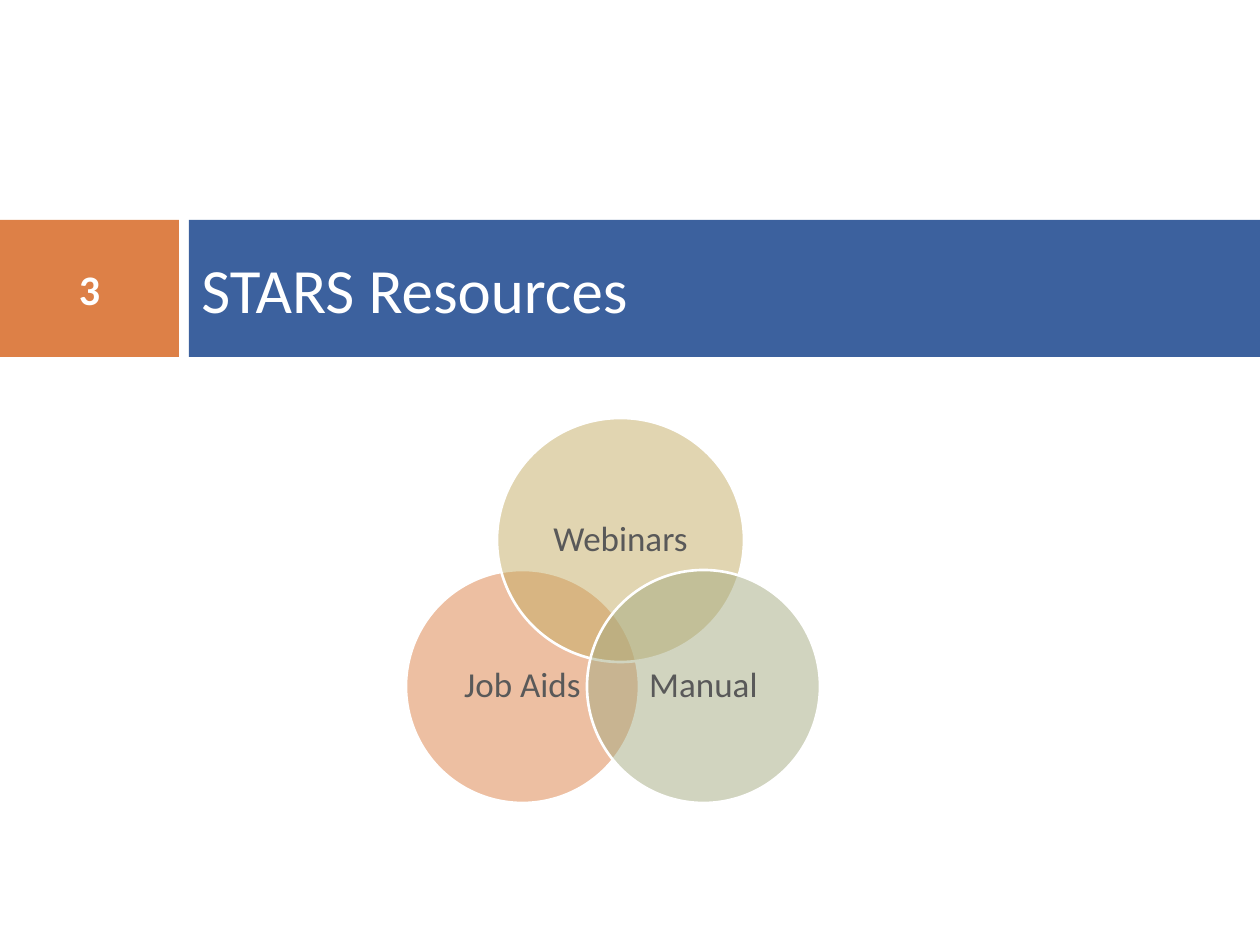
from lxml import etree
from pptx import Presentation
from pptx.dml.color import RGBColor
from pptx.enum.shapes import MSO_SHAPE
from pptx.enum.text import MSO_ANCHOR, PP_ALIGN
from pptx.oxml.ns import qn
from pptx.util import Pt

RECT, OVAL = MSO_SHAPE.RECTANGLE, MSO_SHAPE.OVAL
LEFT, CENTER = PP_ALIGN.LEFT, PP_ALIGN.CENTER
MIDDLE = MSO_ANCHOR.MIDDLE

ORANGE = RGBColor(0xDD, 0x80, 0x47)
BLUE = RGBColor(0x3C, 0x61, 0x9E)
GOLD = RGBColor(0xC4, 0xAD, 0x64)
SAGE = RGBColor(0xA5, 0xAB, 0x81)
GRAY = RGBColor(0x59, 0x59, 0x59)
WHITE = RGBColor(0xFF, 0xFF, 0xFF)

FONT = "Calibri"
PX_PER_INCH = 126


def px(n):
    return round(n * 914400 / PX_PER_INCH)


def add_labelled(s, kind, box, fill, text, size, color, align=CENTER):
    sp = s.shapes.add_shape(kind, *map(px, box))
    sp.shadow.inherit = False
    sp.fill.solid()
    sp.fill.fore_color.rgb = fill
    sp.line.fill.background()
    tf = sp.text_frame
    tf.word_wrap = True
    tf.vertical_anchor = MIDDLE
    p = tf.paragraphs[0]
    p.text = text
    p.alignment = align
    p.font.name = FONT
    p.font.size = Pt(size)
    p.font.color.rgb = color
    return sp


def set_alpha(sp, percent):
    clr = sp._element.spPr.find(qn("a:solidFill"))[0]
    etree.SubElement(clr, qn("a:alpha"), val=str(percent * 1000))


def title_band(s, x, y, w, h):
    number_w, gap = 179, 10
    title_x = number_w + gap
    number = add_labelled(s, RECT, (x, y, number_w, h), ORANGE, "3", 24, WHITE)
    number.text_frame.paragraphs[0].font.bold = True
    add_labelled(s, RECT, (x + title_x, y, w - title_x, h), BLUE,
                 "STARS Resources", 36, WHITE, LEFT)


def venn(s, x, y):
    circles = [
        ("Job Aids", ORANGE, 0, 152, 233, 233),
        ("Webinars", GOLD, 91, 0, 247, 244),
        ("Manual", SAGE, 181, 152, 233, 233),
    ]
    for text, fill, dx, dy, w, h in circles:
        sp = add_labelled(s, OVAL, (x + dx, y + dy, w, h), fill, text, 20, GRAY)
        set_alpha(sp, 50)
        sp.line.color.rgb = WHITE
        sp.line.width = Pt(1.5)
        tf = sp.text_frame
        tf.margin_left = tf.margin_right = px(10)
        tf.margin_top = tf.margin_bottom = px(10)
        tf.paragraphs[0].line_spacing = 0.9


def main():
    prs = Presentation()
    prs.slide_width, prs.slide_height = px(1260), px(945)
    s = prs.slides.add_slide(prs.slide_layouts[6])
    title_band(s, 0, 220, 1260, 137)
    venn(s, 406, 418)
    prs.save("out.pptx")


if __name__ == "__main__":
    main()
